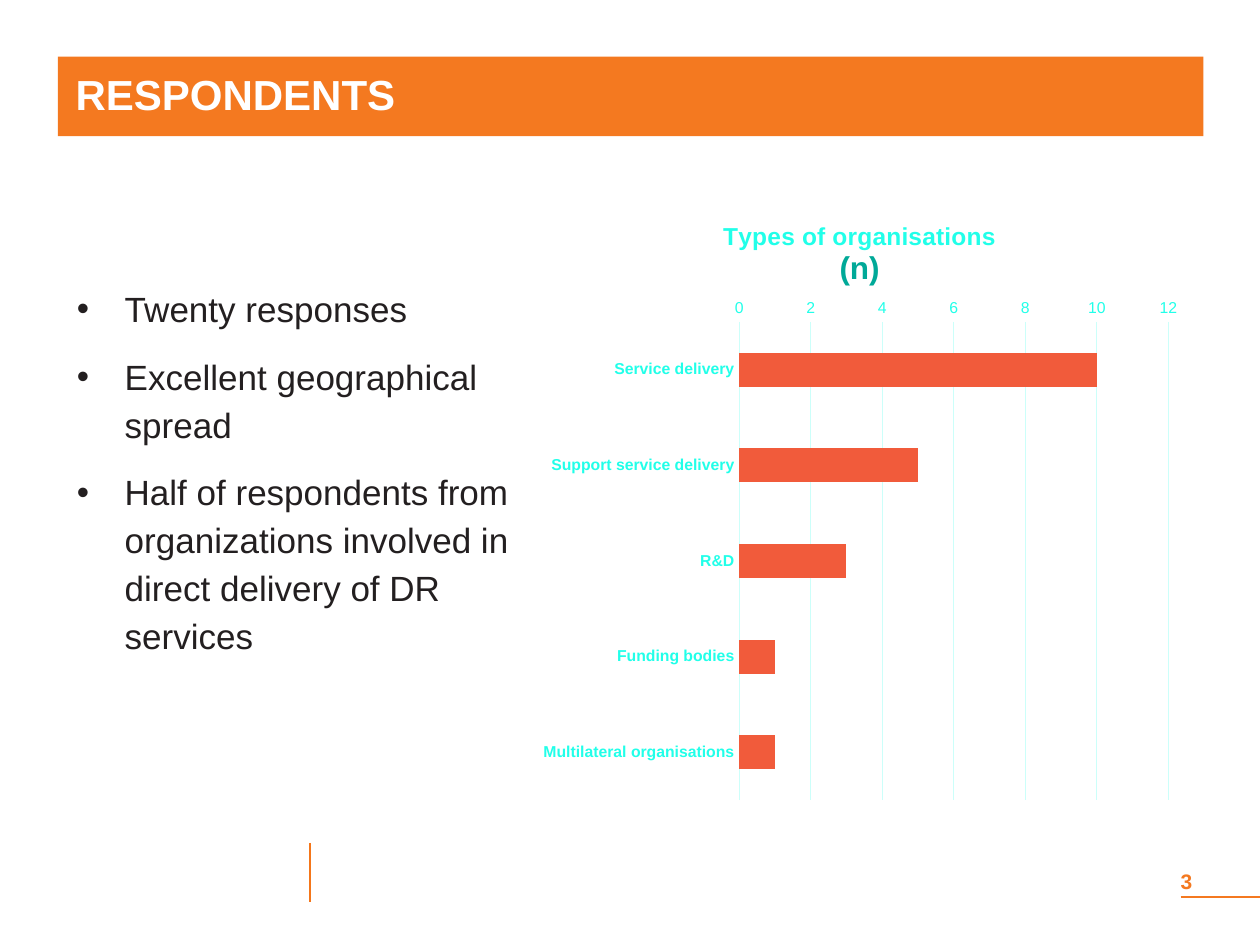
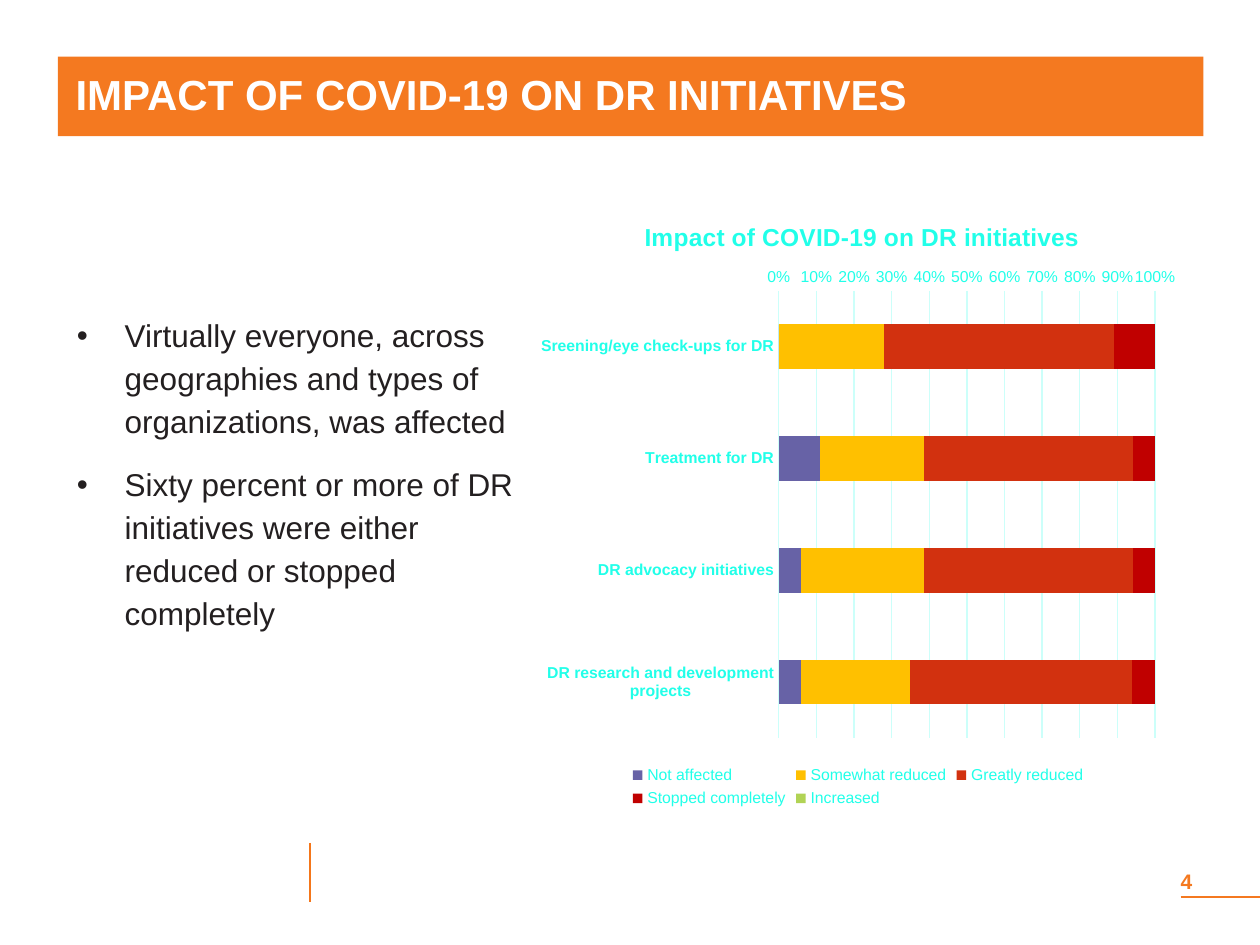
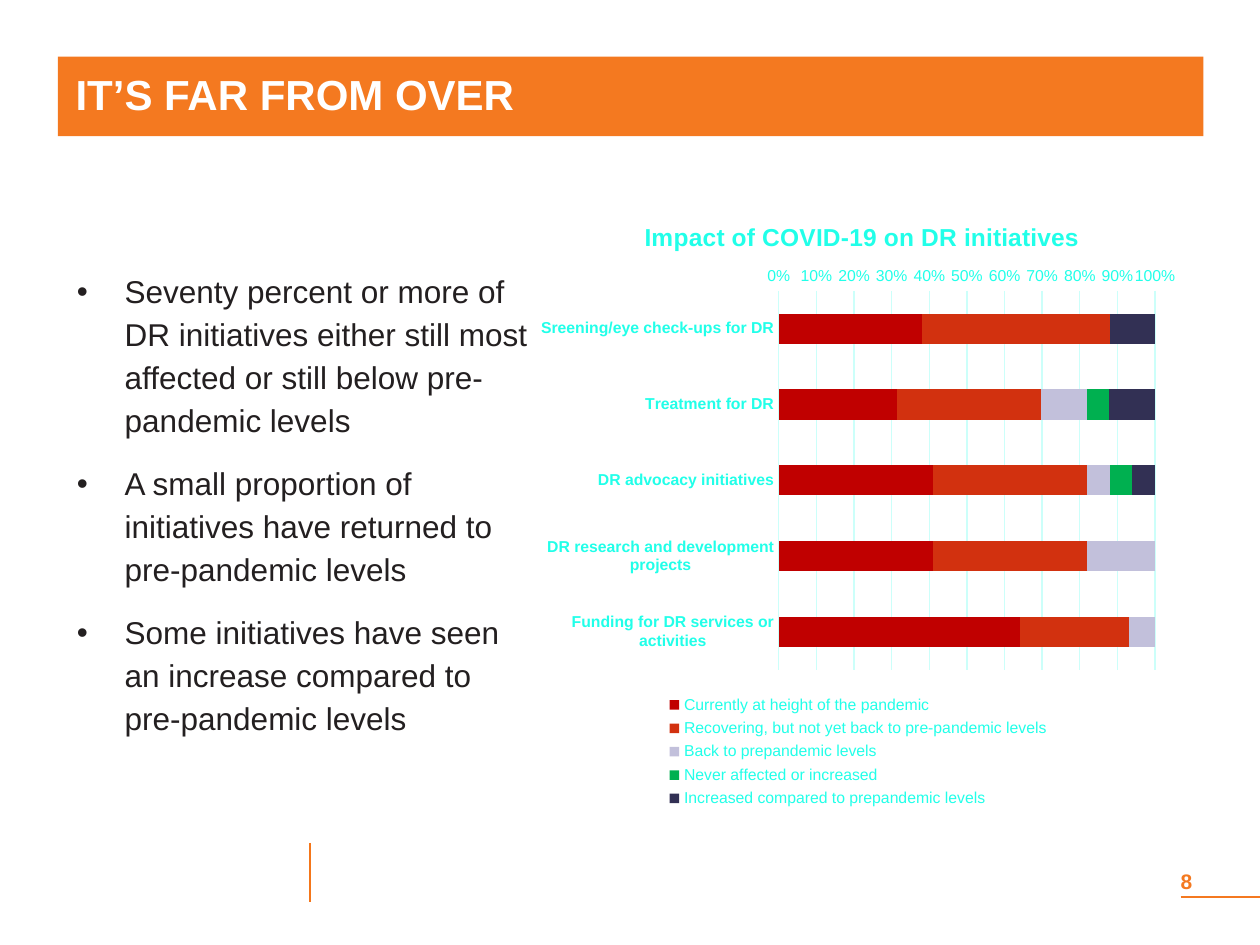
import pptx
import pptx.chart.data
import pptx.dml.color
import pptx.enum.chart
import pptx.enum.shapes
import pptx.enum.text
import pptx.oxml.ns
import pptx.oxml.xmlchemy
import pptx.util

RGB = pptx.dml.color.RGBColor
Pt = pptx.util.Pt
qn = pptx.oxml.ns.qn
OxmlElement = pptx.oxml.xmlchemy.OxmlElement
BAR = pptx.enum.chart.XL_CHART_TYPE

ORANGE = RGB(0xF4, 0x79, 0x20)
DIVIDER = RGB(0xF4, 0x76, 0x1A)
WHITE = RGB(0xFF, 0xFF, 0xFF)
INK = RGB(0x23, 0x1F, 0x20)
TEAL = RGB(0x00, 0xA9, 0x98)
AQUA = RGB(0x21, 0xFF, 0xE9)
PALE_AQUA = RGB(0xCC, 0xFF, 0xFA)
CORAL = RGB(0xF1, 0x5B, 0x3B)
PURPLE = RGB(0x67, 0x62, 0xA6)
AMBER = RGB(0xFF, 0xC0, 0x00)
RED = RGB(0xD2, 0x31, 0x0F)
DARK_RED = RGB(0xC0, 0x00, 0x00)
LIME = RGB(0xB1, 0xD3, 0x55)
LILAC = RGB(0xC2, 0xC0, 0xDB)
GREEN = RGB(0x00, 0xB0, 0x50)
NAVY = RGB(0x32, 0x30, 0x54)

FONT = "Arial"
WIDTH, HEIGHT = 10, 7.5
CONTENT_TOP, CONTENT_HEIGHT = 1.52, 4.93
TITLE_BOX = (0.46, 0.45, 9.09, 0.63)
BODY_BOX = (0.61, CONTENT_TOP, 3.58, CONTENT_HEIGHT)
CHART_BOX = (4.19, CONTENT_TOP, 5.24, CONTENT_HEIGHT)
NUMBER_BOX = (9.37, 6.87, 0.63, 0.24)
BULLET_INDENT = 0.38
LINE_SPACING, SPACE_AFTER = 1.14, 11.3

SERVICES = ["Sreening/eye check-ups for DR", "Treatment for DR",
            "DR advocacy initiatives", "DR research and development projects"]
IMPACT_TITLE = [("Impact of COVID-19 on DR initiatives", 14, AQUA)]

# Chart titles: (text, size, colour) per line. Plot and title places: shares of the chart.
SLIDES = [
    dict(number=3, title="RESPONDENTS", size=20, spare_line=True,
         bullets=["Twenty responses", "Excellent geographical spread",
                  "Half of respondents from organizations involved in direct "
                  "delivery of DR services"],
         chart=dict(
             kind=BAR.BAR_CLUSTERED, gap=182,
             title=[("Types of organisations", 14, AQUA), ("(n)", 18, TEAL)],
             title_at=(0.29, 0.04), plot_at=(0.32, 0.21, 0.65, 0.77),
             cats=["Service delivery", "Support service delivery", "R&D",
                   "Funding bodies", "Multilateral organisations"],
             series=[("Series 1", [10, 5, 3, 1, 1], CORAL)])),
    dict(number=4, title="IMPACT OF COVID-19 ON DR INITIATIVES", size=18, spare_line=True,
         bullets=["Virtually everyone, across geographies and types of "
                  "organizations, was affected",
                  "Sixty percent or more of DR initiatives were either reduced "
                  "or stopped completely"],
         chart=dict(
             kind=BAR.BAR_STACKED_100, gap=150, title=IMPACT_TITLE,
             title_at=(0.17, 0.04), plot_at=(0.38, 0.16, 0.57, 0.72),
             cats=SERVICES,
             series=[("Not affected", [0, 11, 6, 6], PURPLE),
                     ("Somewhat reduced", [28, 28, 33, 29], AMBER),
                     ("Greatly reduced", [61, 56, 56, 59], RED),
                     ("Stopped completely", [11, 6, 6, 6], DARK_RED),
                     ("Increased", [0, 0, 0, 0], LIME)])),
    dict(number=8, title="IT’S FAR FROM OVER", size=18, spare_line=False,
         bullets=["Seventy percent or more of DR initiatives either still most "
                  "affected or still below pre-pandemic levels",
                  "A small proportion of initiatives have returned to "
                  "pre-pandemic levels",
                  "Some initiatives have seen an increase compared to "
                  "pre-pandemic levels"],
         chart=dict(
             kind=BAR.BAR_STACKED_100, gap=150, title=IMPACT_TITLE,
             title_at=(0.17, 0.04), plot_at=(0.38, 0.16, 0.57, 0.61),
             cats=SERVICES + ["Funding for DR services or activities"],
             series=[("Currently at height of the pandemic", [38, 31, 41, 41, 64], DARK_RED),
                     ("Recovering, but not yet back to pre-pandemic levels",
                      [50, 38, 41, 41, 29], RED),
                     ("Back to prepandemic levels", [0, 12, 6, 18, 7], LILAC),
                     ("Never affected or increased", [0, 6, 6, 0, 0], GREEN),
                     ("Increased compared to prepandemic levels",
                      [12, 12, 6, 0, 0], NAVY)])),
]


def inches(box):
    return [pptx.util.Inches(v) for v in box]


def place(sp, box):
    sp.left, sp.top, sp.width, sp.height = inches(box)


def set_font(font, size, color, bold=False):
    font.name, font.size, font.bold = FONT, Pt(size), bold
    font.color.rgb = color


def set_frame(tf, left=0):
    """Wrap, centre vertically and drop all insets but the left one."""
    tf.word_wrap = True
    tf.auto_size = pptx.enum.text.MSO_AUTO_SIZE.NONE
    tf.vertical_anchor = pptx.enum.text.MSO_ANCHOR.MIDDLE
    tf.margin_left = pptx.util.Inches(left)
    tf.margin_top = tf.margin_right = tf.margin_bottom = 0


def write_line(tf, text, spacing, size, color):
    p = tf.paragraphs[0]
    p.text = text
    p.alignment = pptx.enum.text.PP_ALIGN.LEFT
    p.line_spacing = Pt(spacing)
    set_font(p.font, size, color, bold=True)


def add_title(slide, text, box):
    sp = slide.shapes.title
    place(sp, box)
    sp.fill.solid()
    sp.fill.fore_color.rgb = ORANGE
    set_frame(sp.text_frame, left=0.14)
    write_line(sp.text_frame, text, 26, 24, WHITE)


def add_bullets(slide, bullets, size, spare_line, box):
    """Fill the body; spare_line keeps one line free below the list."""
    sp = slide.placeholders[1]
    place(sp, box)
    tf = sp.text_frame
    set_frame(tf)
    if spare_line:
        tf.margin_bottom = Pt(size * 1.15 * LINE_SPACING + SPACE_AFTER)
    for i, text in enumerate(bullets):
        p = tf.add_paragraph() if i else tf.paragraphs[0]
        p.text = text
        indent = pptx.util.Inches(BULLET_INDENT)
        pPr = p._p.get_or_add_pPr()
        pPr.set("marL", str(indent))
        pPr.set("indent", str(-indent))
        p.line_spacing = LINE_SPACING
        p.space_before, p.space_after = Pt(0), Pt(SPACE_AFTER)
        set_font(p.font, size, INK)


def add_line(slide, start, end, color, width):
    cxn = slide.shapes.add_connector(
        pptx.enum.shapes.MSO_CONNECTOR.STRAIGHT, *inches(start + end))
    cxn.line.color.rgb = color
    cxn.line.width = Pt(width)
    cxn._element.spPr.append(OxmlElement("a:effectLst"))


def add_footer(slide, number, box):
    left, top, width, height = box
    rule = top + height + 0.01
    add_line(slide, (left, rule), (WIDTH, rule), ORANGE, 1.5)
    add_line(slide, (2.46, 6.69), (2.46, 7.16), DIVIDER, 1)
    tf = slide.shapes.add_textbox(*inches(box)).text_frame
    set_frame(tf)
    write_line(tf, str(number), 14.4, 12, ORANGE)


def set_layout(parent, index, shares, inner=False):
    """Fix a chart part at x, y (w, h) as shares of the chart."""
    layout = parent.find(qn("c:layout"))
    if layout is None:
        layout = OxmlElement("c:layout")
        parent.insert(index, layout)
    manual = OxmlElement("c:manualLayout")
    layout.append(manual)
    values = [("layoutTarget", "inner")] if inner else []
    values += [("xMode", "edge"), ("yMode", "edge")]
    values += zip("xywh", shares)
    for tag, value in values:
        el = OxmlElement("c:" + tag)
        el.set("val", str(value))
        manual.append(el)


def set_chart_title(chart, lines, shares):
    tf = chart.chart_title.text_frame
    for i, (text, size, color) in enumerate(lines):
        p = tf.add_paragraph() if i else tf.paragraphs[0]
        r = p.add_run()
        r.text = text
        p.alignment = pptx.enum.text.PP_ALIGN.CENTER
        set_font(r.font, size, color, bold=True)
    set_layout(chart.chart_title._element, 1, shares)


def format_axes(chart, stacked):
    cat, val = chart.category_axis, chart.value_axis
    for axis in (cat, val):
        axis.major_tick_mark = axis.minor_tick_mark = pptx.enum.chart.XL_TICK_MARK.NONE
        set_font(axis.tick_labels.font, 9, AQUA, bold=axis is cat)
    cat.reverse_order = True
    val.has_major_gridlines = True
    val.format.line.fill.background()
    for line in (cat.format.line, val.major_gridlines.format.line):
        line.color.rgb = PALE_AQUA
        line.width = Pt(0.75)
    val.tick_labels.number_format = "0%" if stacked else "General"
    val.tick_labels.number_format_is_linked = False


def add_bar_chart(slide, box, kind, gap, title, title_at, plot_at, cats, series):
    data = pptx.chart.data.CategoryChartData()
    data.categories = cats
    for name, values, _ in series:
        data.add_series(name, values)
    chart = slide.shapes.add_chart(kind, *inches(box), data).chart
    set_font(chart.font, 10, TEAL)
    stacked = kind == BAR.BAR_STACKED_100
    set_chart_title(chart, title, title_at)
    format_axes(chart, stacked)
    plot = chart.plots[0]
    plot.vary_by_categories = False
    plot.gap_width = gap
    if stacked:
        plot.overlap = 100
    for ser, (_, _, color) in zip(plot.series, series):
        ser.format.fill.solid()
        ser.format.fill.fore_color.rgb = color
    chart.has_legend = stacked
    if stacked:
        chart.legend.position = pptx.enum.chart.XL_LEGEND_POSITION.BOTTOM
        chart.legend.include_in_layout = False
        set_font(chart.legend.font, 9, AQUA)
    plot_area = chart._chartSpace.chart.plotArea
    set_layout(plot_area, 0, plot_at, inner=True)


def add_chart_slide(prs, number, title, size, spare_line, bullets, chart):
    slide = prs.slides.add_slide(prs.slide_layouts[1])
    add_title(slide, title, TITLE_BOX)
    add_bullets(slide, bullets, size, spare_line, BODY_BOX)
    add_footer(slide, number, NUMBER_BOX)
    add_bar_chart(slide, CHART_BOX, **chart)


def main():
    prs = pptx.Presentation()
    prs.slide_width, prs.slide_height = inches((WIDTH, HEIGHT))
    for content in SLIDES:
        add_chart_slide(prs, **content)
    prs.save("out.pptx")


if __name__ == "__main__":
    main()
